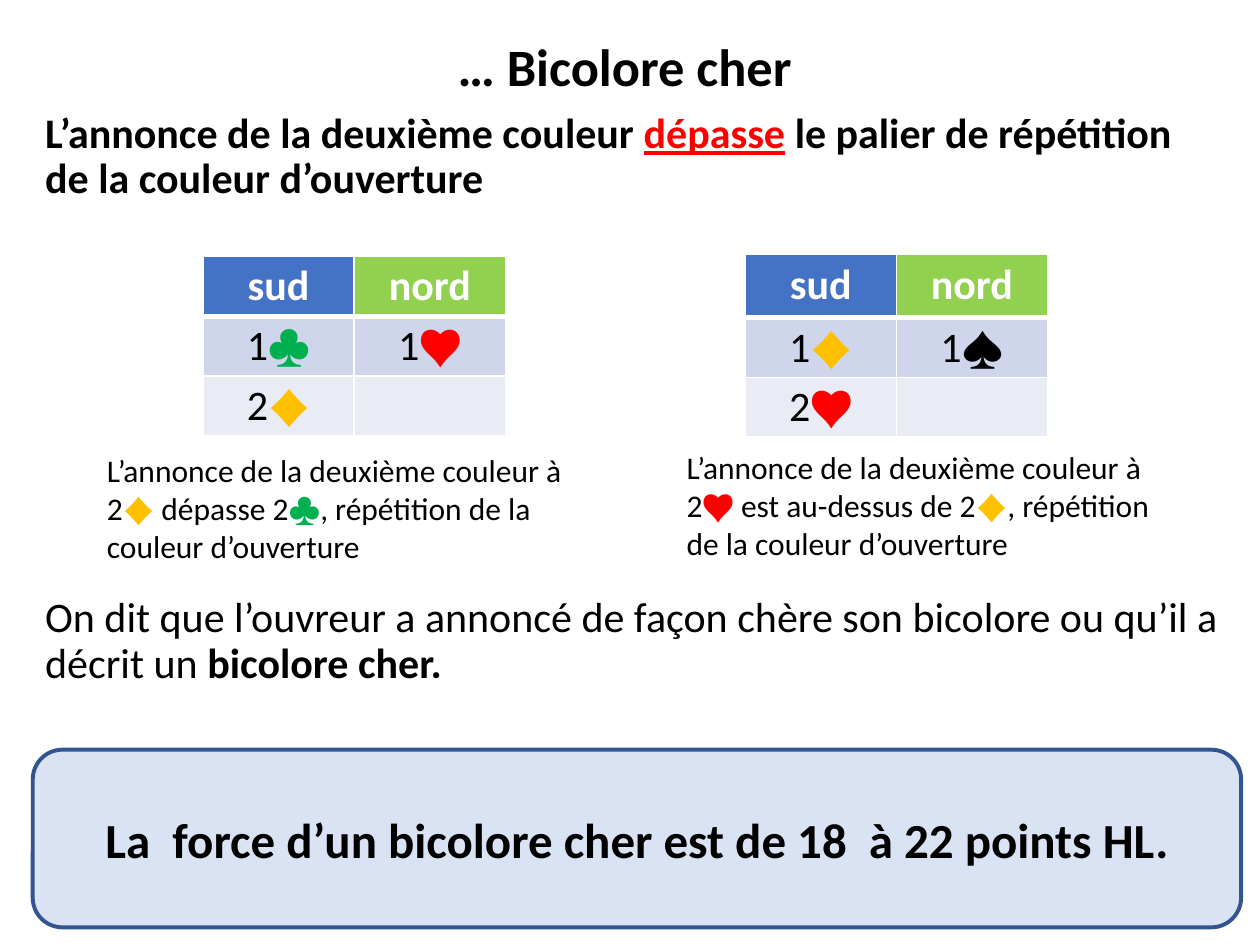
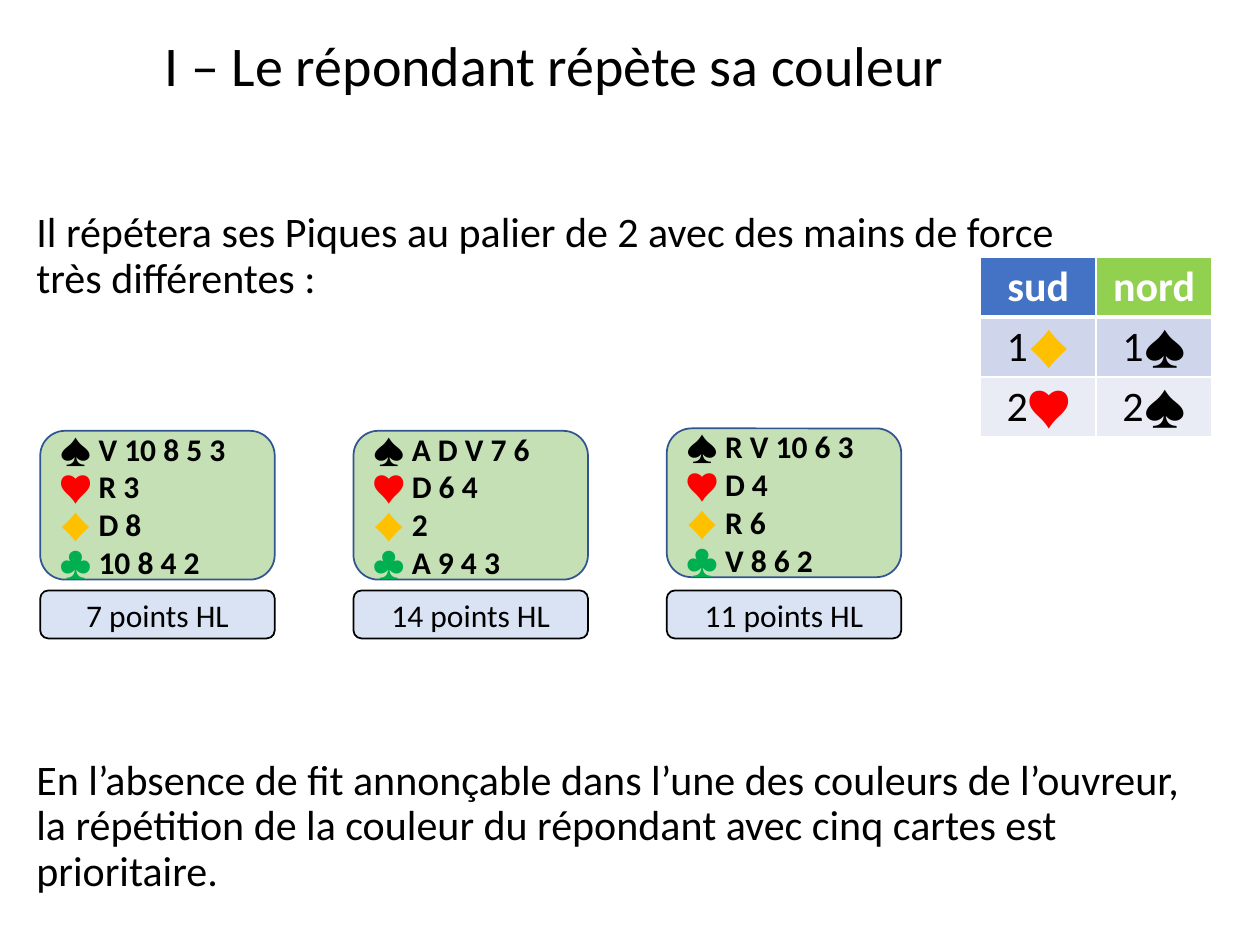
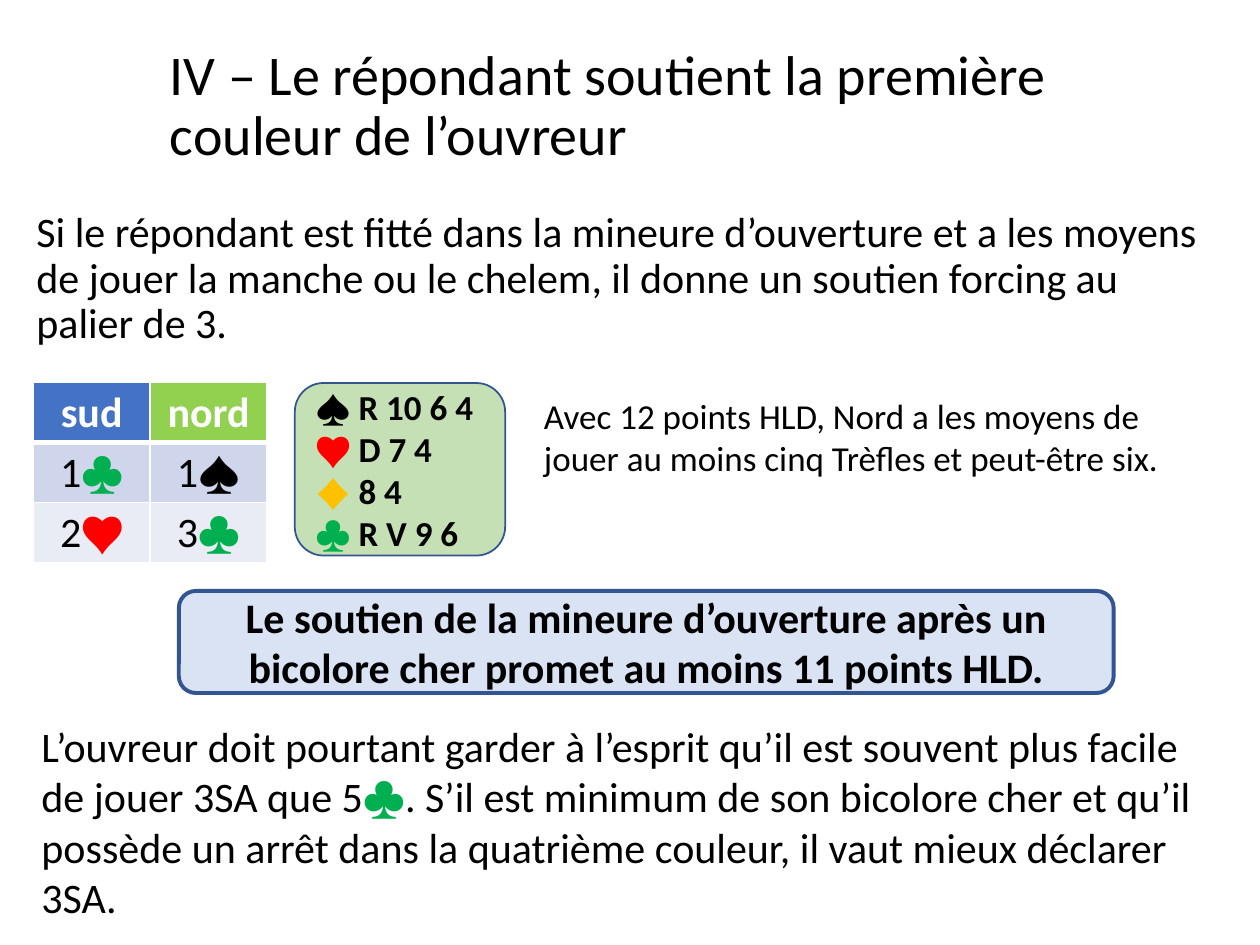
from itertools import groupby

from lxml.etree import SubElement
from pptx import Presentation
from pptx.dml.color import RGBColor
from pptx.enum.shapes import MSO_SHAPE as Shape
from pptx.enum.text import MSO_ANCHOR as Anchor, PP_ALIGN as Align
from pptx.oxml import parse_xml
from pptx.oxml.ns import qn
from pptx.util import Pt

# Shared look
FONT = "Calibri"
BLACK, WHITE, RED = "000000", "FFFFFF", "FF0000"
BLUE, LIME, NAVY = "4472C4", "92D050", "325491"
PALE, GREEN = "DAE3F3", "C5E0B4"
BANDS = ("CFD5EA", "E9EBF5")
SUITS = {"♠": BLACK, "♥": RED, "♦": "FFC000", "♣": "00B050"}
NS = "http://schemas.openxmlformats.org/drawingml/2006/main"


def rgb(code):
    return RGBColor.from_string(code)


# Text: *bold*, _red underline_, suits in their own colour
def add_run(para, text, size, color, bold, under=False):
    run = para.add_run()
    run.text = text
    font = run.font
    font.name, font.size, font.bold = FONT, Pt(size), bold
    font.underline = under
    font.color.rgb = rgb(color)


def write(para, text, size, color=BLACK):
    for i, part in enumerate(text.split("*")):
        for j, piece in enumerate(part.split("_")):
            base = RED if j % 2 else color
            for suit, chars in groupby(piece, SUITS.get):
                bold = i % 2 == 1 and not suit
                add_run(para, "".join(chars), size, suit or base,
                        bold, j % 2 == 1)


def fill_text(frame, lines, size, align=Align.LEFT, anchor=Anchor.TOP,
              pitch=1.0, gap=0):
    frame.word_wrap = True
    frame.vertical_anchor = anchor
    for i, line in enumerate(lines):
        para = frame.add_paragraph() if i else frame.paragraphs[0]
        para.alignment, para.line_spacing = align, pitch
        para.space_before = Pt(gap if i else 0)
        for k, row in enumerate(line.split("\n")):
            if k:
                para.add_line_break()
            write(para, row, size)


def add_text(slide, box, lines, size, **look):
    shape = slide.shapes.add_textbox(*map(Pt, box))
    fill_text(shape.text_frame, lines, size, **look)


def add_title(slide, box, text, size=32, align=Align.LEFT):
    add_text(slide, box, [text], size, align=align, anchor=Anchor.BOTTOM,
             pitch=0.9)


def add_body(slide, box, lines, gap=0):
    add_text(slide, box, lines, 24, pitch=0.9, gap=gap)


# Rounded panels
def add_panel(slide, box, lines, size, fill=PALE, edge=NAVY, width=2.25,
              align=Align.CENTER):
    shape = slide.shapes.add_shape(Shape.ROUNDED_RECTANGLE, *map(Pt, box))
    shape.shadow.inherit = False
    shape.fill.solid()
    shape.fill.fore_color.rgb = rgb(fill)
    shape.line.color.rgb = rgb(edge)
    shape.line.width = Pt(width)
    fill_text(shape.text_frame, lines, size, align, Anchor.MIDDLE)


def add_hand(slide, box, cards, size):
    lines = [f"{suit} *{held}*" for suit, held in zip(SUITS, cards)]
    add_panel(slide, box, lines, size, GREEN, NAVY, 1, Align.LEFT)


# Bidding tables
def add_edges(cell, top, bottom):
    props = cell._tc.get_or_add_tcPr()
    sides = (("L", 1), ("R", 1), ("T", top), ("B", bottom))
    for i, (side, width) in enumerate(sides):
        edge = parse_xml(f'<a:ln{side} xmlns:a="{NS}" w="{Pt(width)}"/>')
        solid = SubElement(edge, qn("a:solidFill"))
        SubElement(solid, qn("a:srgbClr"), val=WHITE)
        props.insert(i, edge)


def add_bids(slide, left, top, width, heights, bids):
    rows = [("*sud*", "*nord*"), *bids]
    table = slide.shapes.add_table(len(rows), 2, Pt(left), Pt(top),
                                   Pt(width * 2), Pt(sum(heights))).table
    for col in table.columns:
        col.width = Pt(width)
    for r, row in enumerate(rows):
        table.rows[r].height = Pt(heights[r])
        for c, text in enumerate(row):
            cell = table.cell(r, c)
            cell.margin_left = cell.margin_right = Pt(5.4)
            cell.margin_top = cell.margin_bottom = Pt(2.7)
            cell.fill.solid()
            fill = BANDS[r - 1] if r else (BLUE, LIME)[c]
            cell.fill.fore_color.rgb = rgb(fill)
            add_edges(cell, 3 if r == 1 else 1, 1 if r else 3)
            para = cell.text_frame.paragraphs[0]
            para.alignment = Align.CENTER
            if text:
                write(para, text, 24, BLACK if r else WHITE)


# Slides
def show_rule(slide):
    add_panel(slide, (18.7, 428.4, 690.5, 101.5),
              ["*La  force d’un bicolore cher est de 18  à 22 points HL.*"], 28)
    add_title(slide, (87, 23, 540, 36.7), "*… Bicolore cher*", 30,
              Align.CENTER)
    add_body(slide, (18.7, 60.5, 687.6, 455), [
        "*L’annonce de la deuxième couleur _dépasse_ le palier de répétition "
        "de la couleur d’ouverture*",
        "On dit que l’ouvreur a annoncé de façon chère son bicolore ou qu’il "
        "a décrit un *bicolore cher.*"], 225)
    add_bids(slide, 116, 146.5, 86.4, (33, 31, 31),
             [("1♣", "1♥"), ("2♦", "")])
    add_text(slide, (54, 254.2, 296.6, 72.7), [
        "L’annonce de la deuxième couleur à 2♦ dépasse 2♣, répétition de la "
        "couleur d’ouverture"], 18)
    add_bids(slide, 425.8, 145.4, 86.4, (36, 33, 33),
             [("1♦", "1♠"), ("2♥", "")])
    add_text(slide, (385.2, 252.7, 296.6, 72.7), [
        "L’annonce de la deuxième couleur à 2♥ est au-dessus de 2♦, "
        "répétition de la couleur d’ouverture"], 18)


def show_repeat(slide):
    add_body(slide, (13.7, 117.4, 687.6, 407.5), [
        "Il répétera ses Piques au palier de 2 avec des mains de force \n"
        "très différentes :",
        "En l’absence de fit annonçable dans l’une des couleurs de "
        "l’ouvreur, la répétition de la couleur du répondant avec cinq "
        "cartes est prioritaire."], 261)
    add_bids(slide, 560.2, 147, 66.2, (33, 33, 33),
             [("1♦", "1♠"), ("2♥", "2♠")])
    hands = [
        (246.2, ("V 10 8 5 3", "R 3", "D 8", "10 8 4 2"), 7),
        (246.2, ("A D V 7 6", "D 6 4", "2", "A 9 4 3"), 14),
        (244.8, ("R V 10 6 3", "D 4", "R 6", "V 8 6 2"), 11)]
    for i, (top, cards, points) in enumerate(hands):
        left = 23 + 179 * i
        add_hand(slide, (left, top, 134, 85), cards, 18)
        add_panel(slide, (left, 337.4, 134, 27.4), [f"{points} points HL"],
                  18, edge=BLACK, width=1)
    add_title(slide, (87, 23.4, 540, 36.7),
              "I – Le répondant répète sa couleur")


def show_raise(slide):
    add_body(slide, (13.7, 117.4, 687.6, 409.7), [
        "Si le répondant est fitté dans la mineure d’ouverture et a les "
        "moyens de jouer la manche ou le chelem, il donne un soutien forcing "
        "au palier de 3."])
    add_bids(slide, 19, 218.7, 66.8, (27.4, 27.4, 27.4),
             [("1♣", "1♠"), ("2♥", "3♣")])
    add_text(slide, (303.8, 221.8, 388.8, 55.4), [
        "Avec 12 points HLD, Nord a les moyens de jouer au moins cinq "
        "Trèfles et peut-être six."], 20)
    add_text(slide, (16.6, 408.2, 687.6, 123.8), [
        "L’ouvreur doit pourtant garder à l’esprit qu’il est souvent plus "
        "facile de jouer 3SA que 5♣. S’il est minimum de son bicolore cher "
        "et qu’il possède un arrêt dans la quatrième couleur, il vaut mieux "
        "déclarer 3SA."], 24)
    add_hand(slide, (168.5, 218.9, 120.2, 98.6),
             ("R 10 6 4", "D 7 4", "8 4", "R V 9 6"), 20)
    add_panel(slide, (102.2, 337.7, 534.2, 58.3), [
        "*Le soutien de la mineure d’ouverture après un bicolore cher promet "
        "au moins 11 points HLD.*"], 24)
    add_title(slide, (90, 13, 540, 86.4),
              "IV – Le répondant soutient la première couleur de l’ouvreur")


def main():
    deck = Presentation()
    deck.slide_width, deck.slide_height = Pt(720), Pt(540)
    for show in (show_rule, show_repeat, show_raise):
        show(deck.slides.add_slide(deck.slide_layouts[6]))
    deck.save("out.pptx")


if __name__ == "__main__":
    main()
